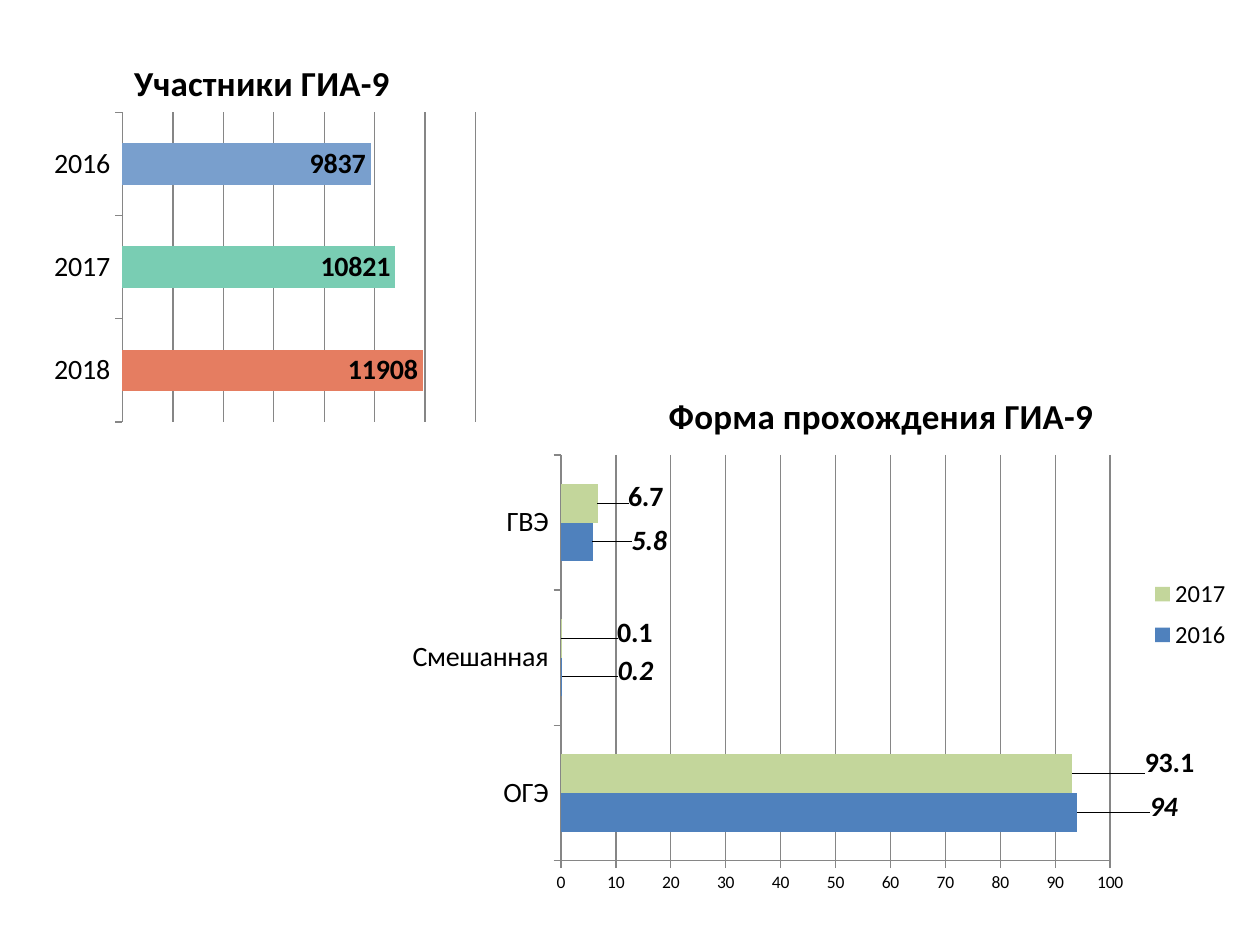
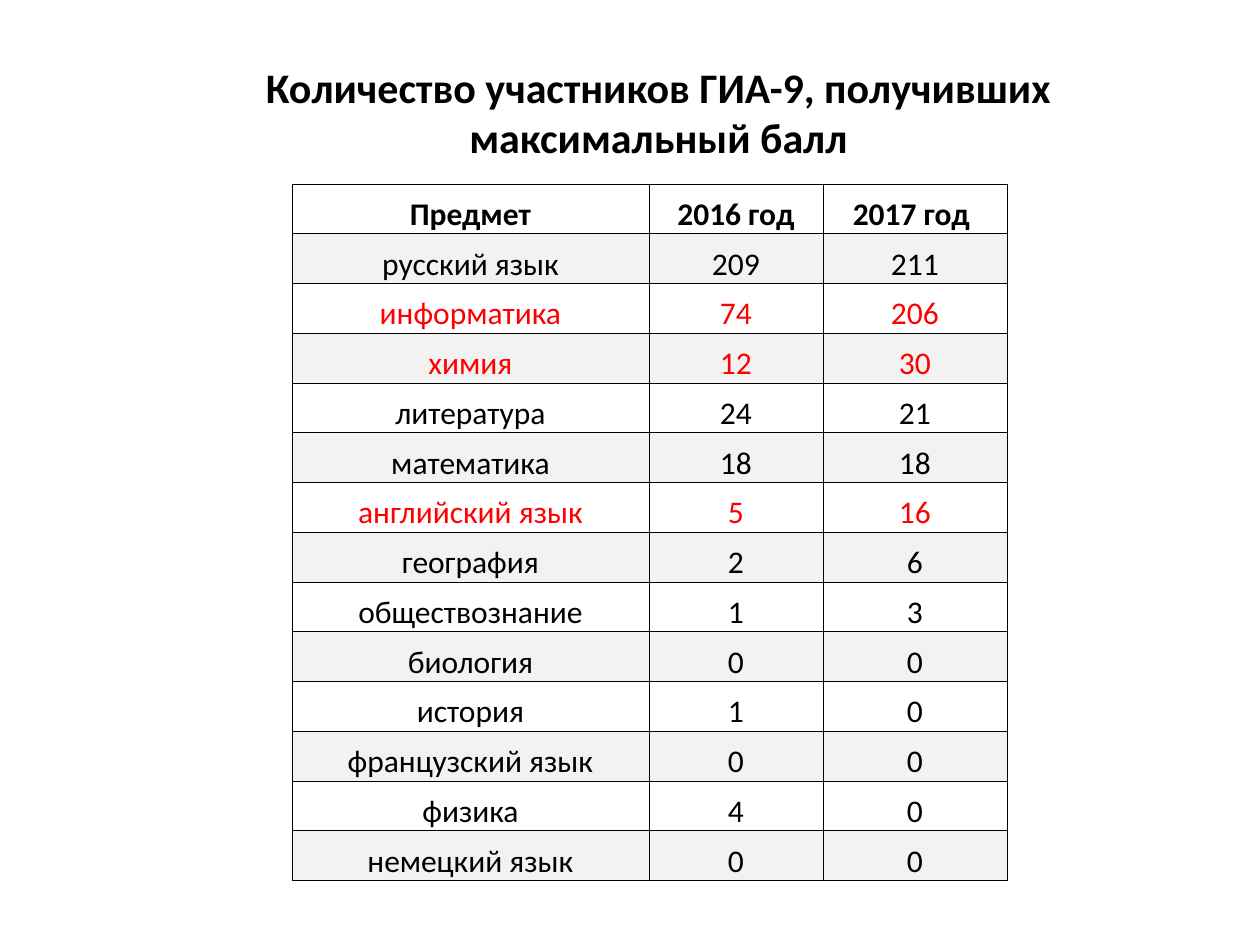
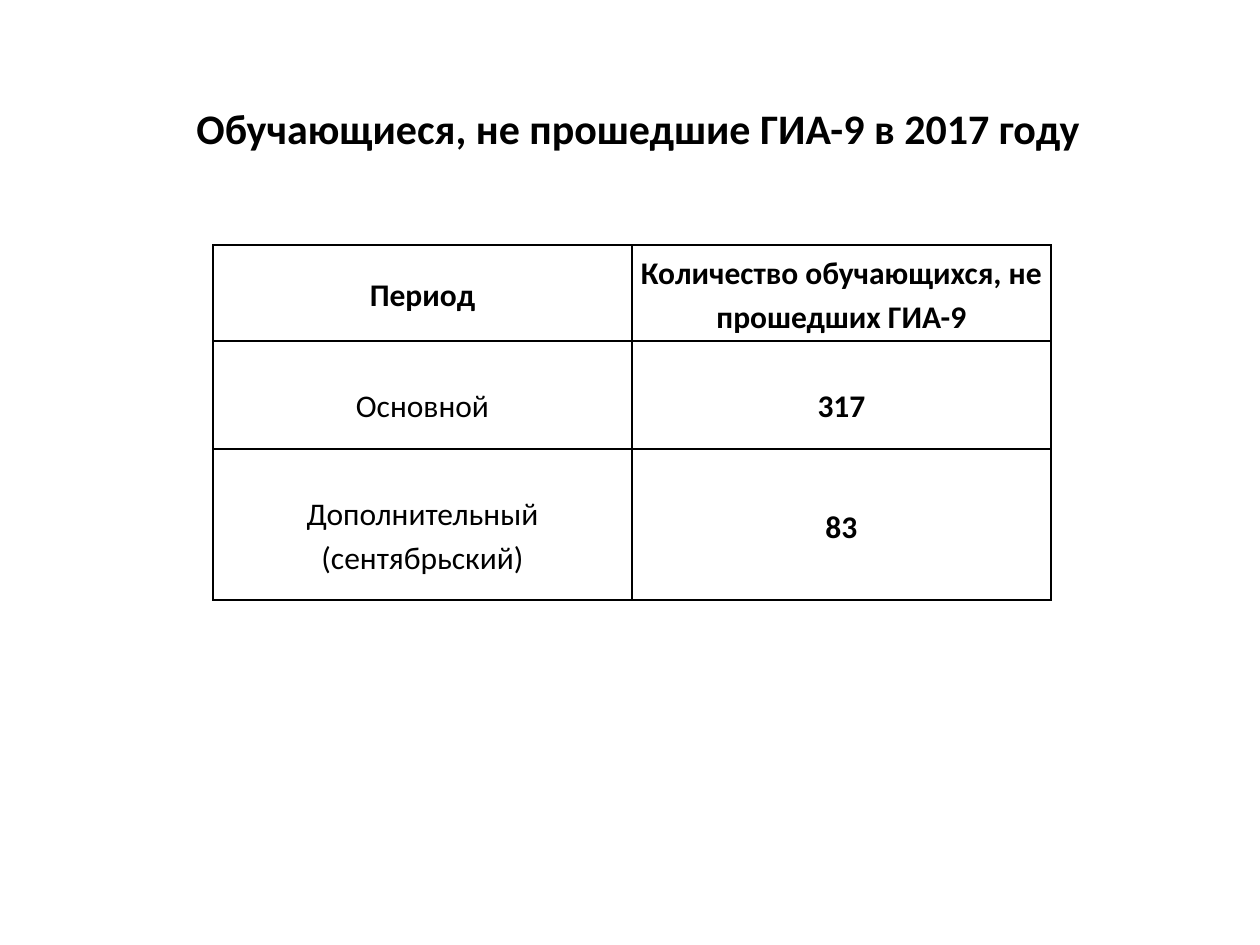
"""Build three slides on the GIA-9 exam: two bar charts and two tables."""
from lxml.etree import SubElement
from pptx import Presentation
from pptx.chart.data import CategoryChartData
from pptx.dml.color import RGBColor
from pptx.enum.chart import XL_CHART_TYPE, XL_LABEL_POSITION, XL_LEGEND_POSITION, XL_TICK_MARK
from pptx.enum.text import MSO_ANCHOR, PP_ALIGN
from pptx.oxml import parse_xml
from pptx.oxml.ns import nsdecls, qn
from pptx.util import Pt

PX = 7257
FONT = "Calibri"
BLACK, RED, BAND, GRID = "000000", "FF0000", "F2F2F2", "868686"
rgb = RGBColor.from_string


def set_font(font, size, bold=False, color=BLACK):
    font.name, font.size, font.bold = FONT, Pt(size), bold
    font.color.rgb = rgb(color)


def set_layout(element, index, **values):
    for old in element.findall(qn("c:layout")):
        element.remove(old)
    layout = parse_xml(f"<c:layout {nsdecls('c')}><c:manualLayout/></c:layout>")
    for tag, val in values.items():
        SubElement(layout[0], qn(f"c:{tag}")).set("val", str(val))
    element.insert(index, layout)


prs = Presentation()
prs.slide_width, prs.slide_height = 1260 * PX, 945 * PX
blank = prs.slide_layouts[6]

s = prs.slides.add_slide(blank)
charts = []
for title, box, plot_box, cats, data, colors, top, step in [
    ("Участники ГИА-9", (44, 37, 436, 397), (0.18, 0.19, 0.81, 0.78),
     ["2016", "2017", "2018"], {"Series 1": [9837, 10821, 11908]}, ["799FCD"], 14000, 2000),
    ("Форма прохождения ГИА-9", (392, 363, 845, 541), (0.2, 0.17, 0.65, 0.75),
     ["ОГЭ", "Смешанная", "ГВЭ"], {"2016": [94, 0.2, 5.8], "2017": [93.1, 0.1, 6.7]},
     ["4F81BD", "C3D69B"], 100, 10),
]:
    cd = CategoryChartData()
    cd.categories = cats
    for name, vals in data.items():
        cd.add_series(name, vals)
    chart = s.shapes.add_chart(XL_CHART_TYPE.BAR_CLUSTERED, *[v * PX for v in box], cd).chart
    charts.append(chart)
    set_font(chart.font, 10)
    chart.has_legend = False
    r = chart.chart_title.text_frame.paragraphs[0].add_run()
    r.text = title
    set_font(r.font, 20, True)
    plot = chart.plots[0]
    plot.vary_by_categories = False
    plot.gap_width, plot.overlap = 150, 0
    cat, val = chart.category_axis, chart.value_axis
    set_font(cat.tick_labels.font, 16)
    val.minimum_scale, val.maximum_scale, val.major_unit = 0, top, step
    val.has_major_gridlines = True
    val.major_gridlines.format.line.color.rgb = rgb(GRID)
    for axis in (cat, val):
        axis.major_tick_mark = XL_TICK_MARK.OUTSIDE
        axis.format.line.color.rgb = rgb(GRID)
    for ser, color in zip(plot.series, colors):
        ser.format.fill.solid()
        ser.format.fill.fore_color.rgb = rgb(color)
        ser.data_labels.show_value = True
        set_font(ser.data_labels.font, 16, True)
    x, y, w, h = plot_box
    set_layout(chart._chartSpace.chart.plotArea, 0, layoutTarget="inner",
               xMode="edge", yMode="edge", x=x, y=y, w=w, h=h)

people, forms = charts
people.category_axis.reverse_order = True
people.value_axis.visible = False
ser = people.plots[0].series[0]
ser.data_labels.position = XL_LABEL_POSITION.INSIDE_END
for i, color in enumerate(["79CDB3", "E57D61"], 1):
    fill = ser.points[i].format.fill
    fill.solid()
    fill.fore_color.rgb = rgb(color)

forms.has_legend = True
legend = forms.legend
legend.position = XL_LEGEND_POSITION.RIGHT
legend.include_in_layout = False
set_font(legend.font, 14)
set_layout(legend._element, 1, xMode="edge", yMode="edge", x=0.89, y=0.38, w=0.11, h=0.17)
set_layout(forms.chart_title._element, 1, xMode="edge", yMode="edge", x=0.32, y=0.04)
shifts = [
    [(0.08, -0.01), (0.06, -0.01), (0.04, 0)],
    [(0.08, -0.02), (0.06, -0.01), (0.03, -0.01)],
]
for ser, italic, offsets in zip(forms.plots[0].series, (True, False), shifts):
    for i, (x, y) in enumerate(offsets):
        label = ser.points[i].data_label
        set_font(label.font, 16, True)
        label.font.italic = italic
        label.position = XL_LABEL_POSITION.OUTSIDE_END
    for dLbl, (x, y) in zip(ser._element.iter(qn("c:dLbl")), offsets):
        set_layout(dLbl, 1, x=x, y=y)

subjects = [
    ("Предмет", "2016 год", "2017 год "),
    ("русский язык", "209", "211"),
    ("информатика", "74", "206"),
    ("химия", "12", "30"),
    ("литература", "24", "21"),
    ("математика", "18", "18"),
    ("английский язык", "5", "16"),
    ("география", "2", "6"),
    ("обществознание", "1", "3"),
    ("биология", "0", "0"),
    ("история", "1", "0"),
    ("французский язык", "0", "0"),
    ("физика", "4", "0"),
    ("немецкий язык", "0", "0"),
]
periods = [
    ("Период", "Количество обучающихся, не прошедших ГИА-9"),
    ("Основной", "317"),
    ("Дополнительный (сентябрьский)", "83"),
]
red_rows = {"информатика", "химия", "английский язык"}

for title, title_box, wrap, rows, left, top, widths, heights, border in [
    ("Количество участников ГИА-9, получивших максимальный балл", (115, 55, 1087, 115), True,
     subjects, 292, 184, (357, 174, 184), [], 0.5),
    ("Обучающиеся, не прошедшие ГИА-9 в 2017 году", (184, 96, 917, 63), False,
     periods, 213, 245, (419, 419), [96, 108, 151], 1),
]:
    s = prs.slides.add_slide(blank)
    tf = s.shapes.add_textbox(*[v * PX for v in title_box]).text_frame
    tf.word_wrap = wrap
    p = tf.paragraphs[0]
    p.alignment = PP_ALIGN.CENTER if wrap else PP_ALIGN.LEFT
    r = p.add_run()
    r.text = title
    set_font(r.font, 24, True)

    height = sum(heights) or 697
    table = s.shapes.add_table(len(rows), len(widths), left * PX, top * PX,
                               sum(widths) * PX, height * PX).table
    table.first_row = table.horz_banding = False
    for col, w in zip(table.columns, widths):
        col.width = w * PX
    for row, h in zip(table.rows, heights):
        row.height = h * PX
    is_subjects = rows is subjects
    for i, texts in enumerate(rows):
        for j, text in enumerate(texts):
            cell = table.cell(i, j)
            cell.margin_left = cell.margin_right = (1 if is_subjects else 9) * PX
            cell.margin_top = cell.margin_bottom = 0
            p = cell.text_frame.paragraphs[0]
            p.alignment = PP_ALIGN.CENTER
            if is_subjects:
                cell.vertical_anchor = MSO_ANCHOR.BOTTOM
            else:
                cell.vertical_anchor = MSO_ANCHOR.MIDDLE
                p.line_spacing = 1.15
                if i and text != "83":
                    cell.margin_top = 18 * PX
            r = p.add_run()
            r.text = text
            bold = i == 0 or (j == 1 and not is_subjects)
            set_font(r.font, 18, bold, RED if texts[0] in red_rows else BLACK)
            if is_subjects and i % 2:
                cell.fill.solid()
                cell.fill.fore_color.rgb = rgb(BAND)
            else:
                cell.fill.background()
            tcPr = cell._tc.get_or_add_tcPr()
            for k, side in enumerate("LRTB"):
                tcPr.insert(k, parse_xml(
                    f'<a:ln{side} {nsdecls("a")} w="{Pt(border)}"><a:solidFill>'
                    f'<a:srgbClr val="{BLACK}"/></a:solidFill></a:ln{side}>'))

prs.save("out.pptx")
